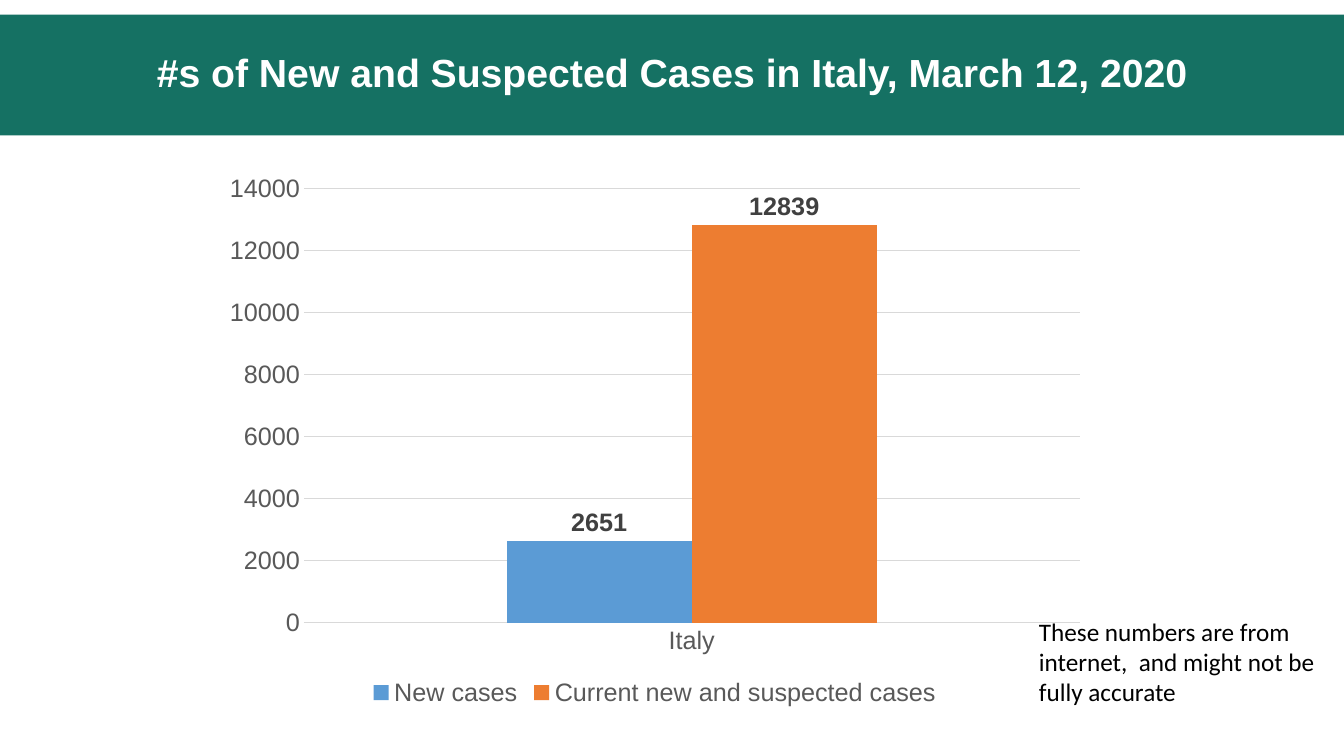
from typing import NamedTuple

from pptx import Presentation
from pptx.chart.data import CategoryChartData as Data
from pptx.dml.color import RGBColor as Rgb
from pptx.enum.chart import XL_CHART_TYPE as Kind
from pptx.enum.chart import XL_LABEL_POSITION as Spot
from pptx.enum.chart import XL_LEGEND_POSITION as Side
from pptx.enum.chart import XL_TICK_MARK as Tick
from pptx.enum.text import MSO_ANCHOR as Anchor
from pptx.enum.text import MSO_AUTO_SIZE as Fit
from pptx.enum.text import PP_ALIGN as Align
from pptx.util import Emu, Pt

PX = 9525
COLORS = {
    "band": "157163",
    "white": "FFFFFF",
    "black": "000000",
    "grid": "D9D9D9",
    "axis": "595959",
    "label": "404040",
    "new": "5B9BD5",
    "total": "ED7D31",
}


class Box(NamedTuple):
    left: int
    top: int
    width: int
    height: int


class Bar(NamedTuple):
    name: str
    value: int
    color: str


BARS = [
    Bar("New cases", 2651, "new"),
    Bar("Current new and suspected cases", 12839, "total"),
]


def px(count: int) -> Emu:
    return Emu(count * PX)


def hue(name: str) -> Rgb:
    return Rgb.from_string(COLORS[name])


def style(font, color: str, size: int = 18, face: str = "Arial", bold: bool = False) -> None:
    font.name = face
    font.size = Pt(size)
    font.bold = bold
    font.color.rgb = hue(color)


def paint(line) -> None:
    line.color.rgb = hue("grid")
    line.width = Pt(0.75)


def write(frame, text: str, *, align=Align.LEFT, anchor=Anchor.TOP,
          space: float = 1.0, fit=Fit.NONE, **font) -> None:
    frame.word_wrap = True
    frame.auto_size = fit
    frame.vertical_anchor = anchor
    para = frame.paragraphs[0]
    para.alignment = align
    para.line_spacing = space
    run = para.add_run()
    run.text = text
    style(run.font, **font)


def add_title(slide, box: Box, text: str) -> None:
    title = slide.shapes.title
    title.left, title.top, title.width, title.height = map(px, box)
    title.fill.solid()
    title.fill.fore_color.rgb = hue("band")
    write(title.text_frame, text, align=Align.CENTER, anchor=Anchor.MIDDLE,
          space=0.9, size=28, color="white", bold=True)


def add_bars(slide, box: Box, place: str, bars: list[Bar]) -> None:
    data = Data()
    data.categories = [place]
    for bar in bars:
        data.add_series(bar.name, [bar.value])
    chart = slide.shapes.add_chart(Kind.COLUMN_CLUSTERED, *map(px, box), data).chart
    style(chart.font, "black", size=10, face="Calibri")
    chart.has_title = False
    chart.has_legend = True
    chart.legend.position = Side.BOTTOM
    chart.legend.include_in_layout = False
    style(chart.legend.font, "axis")

    for axis in (chart.category_axis, chart.value_axis):
        axis.major_tick_mark = axis.minor_tick_mark = Tick.NONE
        style(axis.tick_labels.font, "axis")
    paint(chart.category_axis.format.line)
    scale = chart.value_axis
    scale.minimum_scale, scale.maximum_scale, scale.major_unit = 0, 14000, 2000
    scale.format.line.fill.background()
    paint(scale.major_gridlines.format.line)

    plot = chart.plots[0]
    plot.gap_width = 219
    plot.overlap = 0
    plot.vary_by_categories = False
    for bar, series in zip(bars, plot.series):
        series.format.fill.solid()
        series.format.fill.fore_color.rgb = hue(bar.color)
        labels = series.data_labels
        labels.show_value = True
        labels.position = Spot.OUTSIDE_END
        style(labels.font, "label", bold=True)


def add_note(slide, box: Box, text: str) -> None:
    note = slide.shapes.add_textbox(*map(px, box))
    write(note.text_frame, text, fit=Fit.SHAPE_TO_FIT_TEXT, face="Calibri", color="black")


def main() -> None:
    deck = Presentation()
    deck.slide_width, deck.slide_height = px(1280), px(720)
    slide = deck.slides.add_slide(deck.slide_layouts.get_by_name("Title Only"))
    add_title(slide, Box(0, 14, 1280, 115),
              "#s of New and Suspected Cases in Italy, March 12, 2020")
    add_bars(slide, Box(202, 156, 843, 522), "Italy", BARS)
    add_note(slide, Box(980, 582, 285, 97),
             "These numbers are from internet,  and might not be fully accurate")
    deck.save("out.pptx")


if __name__ == "__main__":
    main()
